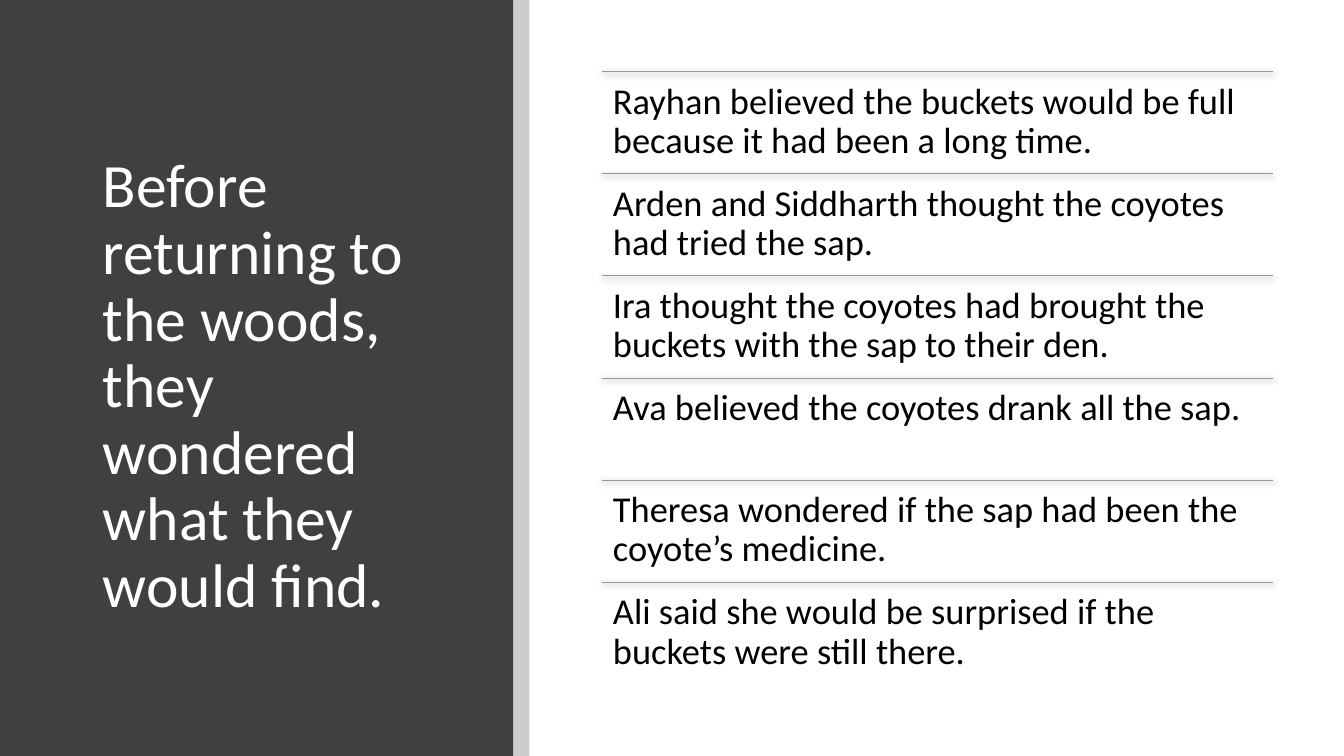
"""Build a slide with a dark title panel and a ruled list of predictions."""
from dataclasses import dataclass

import lxml.etree
import pptx
import pptx.dml.color
import pptx.enum.shapes
import pptx.enum.text
import pptx.oxml
import pptx.oxml.ns
import pptx.util

TITLE = "Before returning to the woods, they wondered what they would find."
IDEAS = [
    "Rayhan believed the buckets would be full because it had been a long time.",
    "Arden and Siddharth thought the coyotes had tried the sap.",
    "Ira thought the coyotes had brought the buckets with the sap to their den.",
    "Ava believed the coyotes drank all the sap.",
    "Theresa wondered if the sap had been the coyote’s medicine.",
    "Ali said she would be surprised if the buckets were still there.",
]

SCALE = 9144
WIDE, HIGH = 1333, 750
PANEL = (0, 0, 509, HIGH)
STRIPE = (509, 0, 16, HIGH)
HEAD = (92, 89, 365, 591)
LIST = (597, 71, 666, 608)
INSET = 11


@dataclass(frozen=True)
class Theme:
    font: str = "Calibri"
    panel: str = "404040"
    black: str = "000000"
    white: str = "FFFFFF"
    rule: str = "969696"
    head: int = 44
    body: int = 26
    line: float = 0.5
    space: float = 0.9


LOOK = Theme()
SHADE = (
    f'<a:effectLst {pptx.oxml.ns.nsdecls("a")}>'
    '<a:outerShdw blurRad="57150" dist="19050" dir="5400000" '
    'algn="ctr" rotWithShape="0">'
    f'<a:srgbClr val="{LOOK.black}"><a:alpha val="63000"/></a:srgbClr>'
    "</a:outerShdw></a:effectLst>"
)


def px(*sizes):
    return [pptx.util.Emu(round(size * SCALE)) for size in sizes]


def tint(code):
    return pptx.dml.color.RGBColor.from_string(code)


def add_bar(slide, area, code):
    kind = pptx.enum.shapes.MSO_SHAPE.RECTANGLE
    bar = slide.shapes.add_shape(kind, *px(*area))
    bar.shadow.inherit = False
    bar.fill.solid()
    bar.fill.fore_color.rgb = tint(code)
    bar.line.fill.background()
    return bar


def write(frame, text, size, code):
    frame.word_wrap = True
    frame.auto_size = pptx.enum.text.MSO_AUTO_SIZE.NONE
    para = frame.paragraphs[0]
    para.text = text
    para.alignment = pptx.enum.text.PP_ALIGN.LEFT
    para.line_spacing = LOOK.space
    para.font.name = LOOK.font
    para.font.size = pptx.util.Pt(size)
    para.font.color.rgb = tint(code)


def add_head(slide):
    title = slide.shapes.title
    title.left, title.top, title.width, title.height = px(*HEAD)
    write(title.text_frame, TITLE, LOOK.head, LOOK.white)
    title.text_frame.vertical_anchor = pptx.enum.text.MSO_ANCHOR.MIDDLE
    slide.shapes._spTree.append(title._element)


def add_idea(slide, text, left, top, width, height):
    kind = pptx.enum.shapes.MSO_CONNECTOR.STRAIGHT
    rule = slide.shapes.add_connector(kind, *px(left, top, left + width, top))
    rule.line.color.rgb = tint(LOOK.rule)
    rule.line.width = pptx.util.Pt(LOOK.line)
    rule._element.spPr.append(pptx.oxml.parse_xml(SHADE))
    box = slide.shapes.add_textbox(*px(left, top, width, height))
    frame = box.text_frame
    for side in ("left", "top", "right", "bottom"):
        setattr(frame, f"margin_{side}", px(INSET)[0])
    write(frame, text, LOOK.body, LOOK.black)


def main():
    deck = pptx.Presentation()
    deck.slide_width, deck.slide_height = px(WIDE, HIGH)
    slide = deck.slides.add_slide(deck.slide_layouts[5])
    slide.background.fill.solid()
    slide.background.fill.fore_color.rgb = tint(LOOK.white)

    add_bar(slide, PANEL, LOOK.panel)
    stripe = add_bar(slide, STRIPE, LOOK.black)
    shade = stripe._element.spPr.find(".//" + pptx.oxml.ns.qn("a:srgbClr"))
    lxml.etree.SubElement(shade, pptx.oxml.ns.qn("a:alpha"), val="20000")
    add_head(slide)

    left, top, width, height = LIST
    step = height / len(IDEAS)
    for row, text in enumerate(IDEAS):
        add_idea(slide, text, left, top + row * step, width, step)
    deck.save("out.pptx")


if __name__ == "__main__":
    main()
